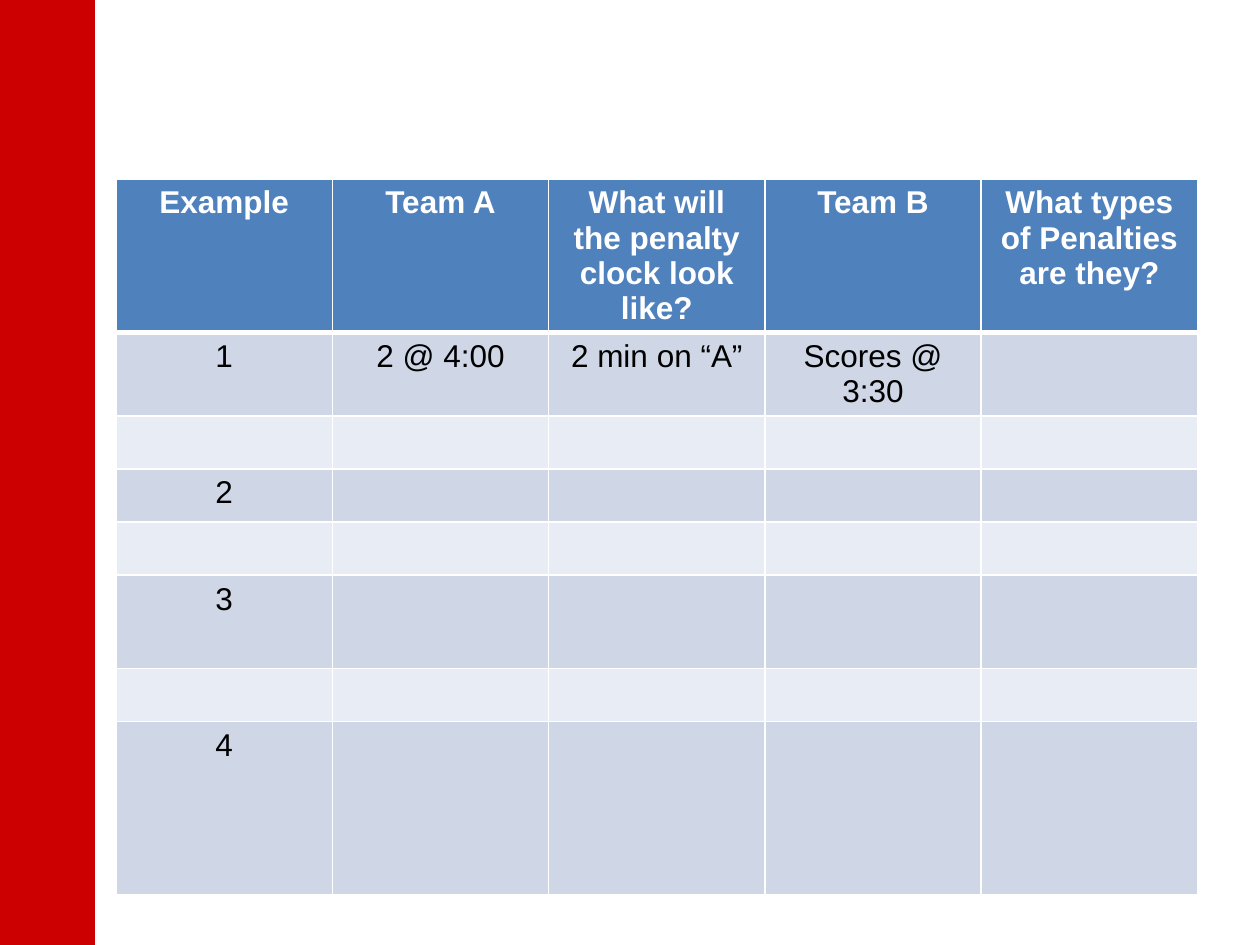
from dataclasses import dataclass

from lxml.etree import SubElement
from pptx import Presentation
from pptx.dml.color import RGBColor
from pptx.enum.shapes import MSO_SHAPE
from pptx.enum.text import PP_ALIGN
from pptx.oxml.ns import qn
from pptx.util import Cm, Pt


@dataclass(frozen=True)
class Theme:
    font: str = "Arial"
    size: int = 18
    red: str = "CC0000"
    blue: str = "4F81BD"
    dark: str = "CFD7E7"
    light: str = "E8ECF4"
    white: str = "FFFFFF"
    black: str = "000000"
    thin: float = 1
    thick: float = 3


HEADS = ["Example", "Team A", "What will the penalty clock look like?",
         "Team B", "What types of Penalties are they?"]
ROWS = [HEADS, ["1", "2 @ 4:00", "2 min on “A”", "Scores @ 3:30"],
        [], ["2"], [], ["3"], [], ["4"]]
HEIGHTS = [2.46, 1.07, 1.07, 1.07, 1.07, 1.88, 1.07, 3.5]
COLUMN = 4.36


class Painter:
    def __init__(self, slide, theme):
        self.slide = slide
        self.theme = theme

    def bar(self, left, top, width, height):
        shape = self.slide.shapes.add_shape(
            MSO_SHAPE.RECTANGLE, Cm(left), Cm(top), Cm(width), Cm(height))
        color = RGBColor.from_string(self.theme.red)
        shape.shadow.inherit = False
        shape.fill.solid()
        shape.fill.fore_color.rgb = color
        shape.line.color.rgb = color
        shape.line.width = Pt(0.75)

    def table(self, left, top, column, heights, rows):
        count = len(rows[0])
        table = self.slide.shapes.add_table(
            len(rows), count, Cm(left), Cm(top),
            Cm(column * count), Cm(sum(heights))).table
        for col in table.columns:
            col.width = Cm(column)
        for index, (height, texts) in enumerate(zip(heights, rows)):
            table.rows[index].height = Cm(height)
            for place in range(count):
                text = texts[place] if place < len(texts) else ""
                self.cell(table.cell(index, place), text, index)

    def cell(self, cell, text, row):
        theme = self.theme
        head = row == 0
        self.edges(cell, row)
        cell.fill.solid()
        fill = theme.blue if head else theme.dark if row % 2 else theme.light
        cell.fill.fore_color.rgb = RGBColor.from_string(fill)
        cell.text_frame.text = text
        para = cell.text_frame.paragraphs[0]
        para.alignment = PP_ALIGN.CENTER
        for run in para.runs:
            run.font.name = theme.font
            run.font.size = Pt(theme.size)
            run.font.bold = head
            run.font.color.rgb = RGBColor.from_string(
                theme.white if head else theme.black)

    def edges(self, cell, row):
        """Draw white cell borders, with a thick rule under the header."""
        theme = self.theme
        heavy = {0: "lnB", 1: "lnT"}.get(row)
        props = cell._tc.get_or_add_tcPr()
        for side in ("lnL", "lnR", "lnT", "lnB"):
            width = theme.thick if side == heavy else theme.thin
            line = SubElement(props, qn(f"a:{side}"), w=str(Pt(width)))
            fill = SubElement(line, qn("a:solidFill"))
            SubElement(fill, qn("a:srgbClr"), val=theme.white)


def main():
    deck = Presentation()
    deck.slide_width, deck.slide_height = Cm(25.4), Cm(19.05)
    slide = deck.slides.add_slide(deck.slide_layouts[6])
    paint = Painter(slide, Theme())
    paint.bar(0, 0, 1.9, 19.05)
    paint.table(2.34, 3.61, COLUMN, HEIGHTS, ROWS)
    deck.save("out.pptx")


if __name__ == "__main__":
    main()
